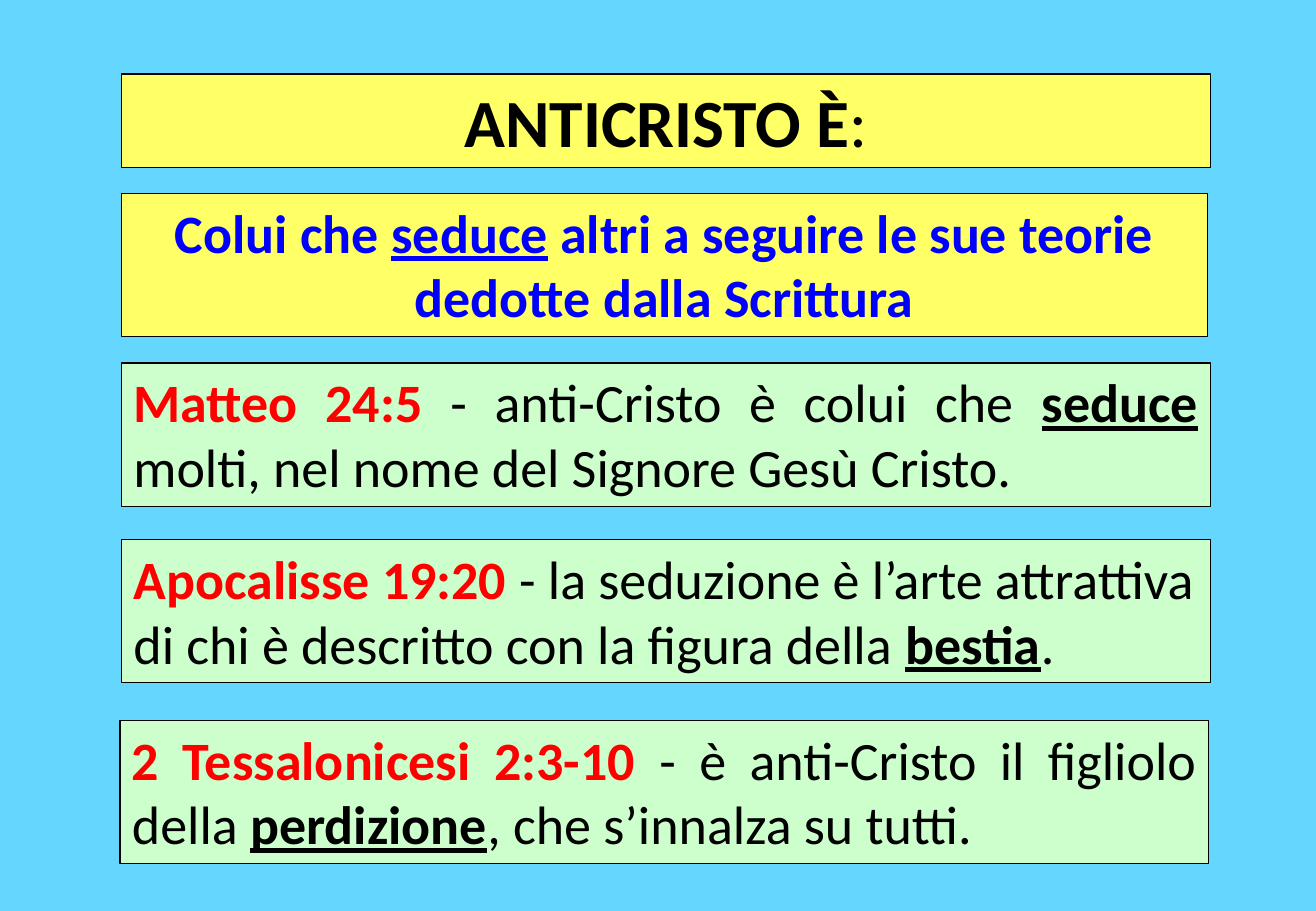
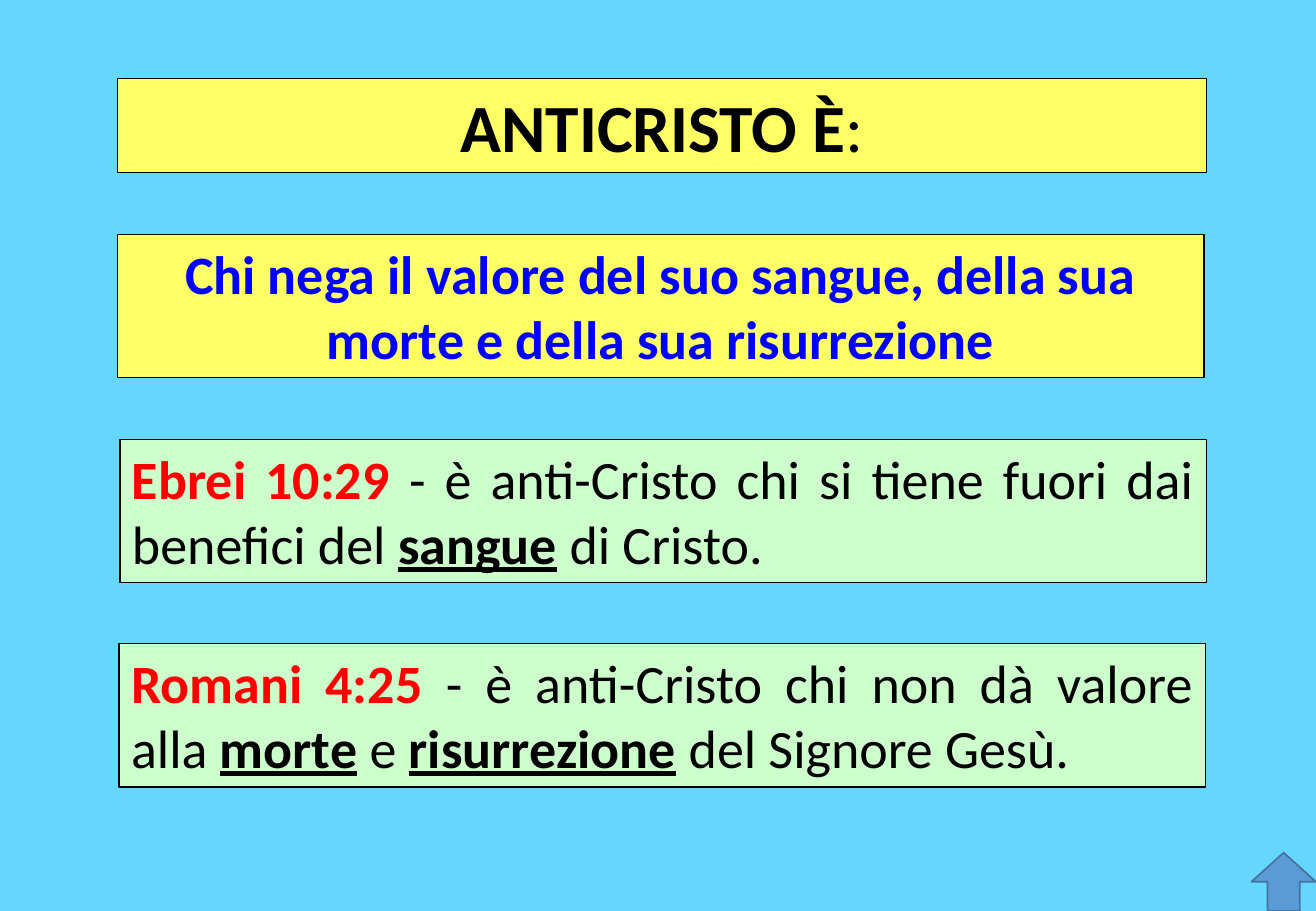
from dataclasses import dataclass
from typing import NamedTuple

from pptx import Presentation
from pptx.dml.color import RGBColor
from pptx.enum.shapes import MSO_SHAPE
from pptx.enum.text import MSO_AUTO_SIZE, PP_ALIGN
from pptx.util import Cm, Pt

LEFT, CENTER, JUSTIFY = PP_ALIGN.LEFT, PP_ALIGN.CENTER, PP_ALIGN.JUSTIFY
GROW = MSO_AUTO_SIZE.SHAPE_TO_FIT_TEXT
UP_ARROW = MSO_SHAPE.UP_ARROW

SLIDE_WIDTH, SLIDE_HEIGHT = Cm(27.51), Cm(19.05)
ARROW_WIDTH, ARROW_HEIGHT = Cm(1.35), Cm(1.22)
HEADING_HEIGHT, PANEL_HEIGHT = 1.96, 3.0
WIDE, NARROW = 22.76, 22.71


@dataclass(frozen=True)
class Theme:
    font: str = "Calibri"
    heading_size: int = 40
    body_size: int = 32
    border_width: float = 0.75
    background: str = "65D7FF"
    heading_fill: str = "FFFF66"
    verse_fill: str = "CCFFCC"
    ink: str = "000000"
    thesis: str = "0000FF"
    reference: str = "FF0000"
    arrow_fill: str = "5B9BD5"
    arrow_line: str = "43739E"


THEME = Theme()


class Run(NamedTuple):
    text: str
    color: str = THEME.ink
    bold: bool = False
    underline: bool = False


@dataclass(frozen=True)
class Panel:
    """A bordered text panel; lengths are in centimetres."""
    left: float
    top: float
    runs: tuple[Run, ...]
    width: float = WIDE
    height: float = PANEL_HEIGHT
    fill: str = THEME.verse_fill
    align: PP_ALIGN = JUSTIFY
    size: int = THEME.body_size


def key(text: str) -> Run:
    """A stressed word inside a verse."""
    return Run(text, bold=True, underline=True)


def reference(text: str) -> Run:
    return Run(text, THEME.reference, bold=True)


def thesis(text: str, underline: bool = False) -> Run:
    return Run(text, THEME.thesis, True, underline)


def heading_panel(left: float, top: float) -> Panel:
    return Panel(left, top, (Run("ANTICRISTO È", bold=True), Run(":")),
                 height=HEADING_HEIGHT, fill=THEME.heading_fill,
                 align=CENTER, size=THEME.heading_size)


def thesis_panel(left: float, top: float, *runs: Run) -> Panel:
    return Panel(left, top, runs, NARROW, fill=THEME.heading_fill, align=CENTER)


SEDUCTION = (
    heading_panel(2.54, 1.55),
    thesis_panel(2.54, 4.04, thesis("Colui che "), thesis("seduce", True),
                 thesis(" altri a seguire le sue teorie dedotte dalla Scrittura")),
    Panel(2.54, 7.59, (
        reference("Matteo 24:5 "), Run("- anti-Cristo è colui che "),
        key("seduce"), Run(" molti, nel nome del Signore Gesù Cristo."))),
    Panel(2.54, 11.28, (
        reference("Apocalisse 19:20 "),
        Run("- la seduzione è l’arte attrattiva di chi è descritto "
            "con la figura della "),
        key("bestia"), Run(".")), align=LEFT),
    Panel(2.51, 15.06, (
        reference("2 Tessalonicesi 2:3-10 "),
        Run("- è anti-Cristo il figliolo della "),
        key("perdizione"), Run(", che s’innalza su tutti."))),
)

DENIAL = (
    heading_panel(2.46, 1.65),
    thesis_panel(2.46, 4.9, thesis("Chi nega il valore del suo sangue, della sua "
                                   "morte e della sua risurrezione")),
    Panel(2.51, 9.19, (
        reference("Ebrei 10:29"),
        Run(" - è anti-Cristo chi si tiene fuori dai benefici del "),
        key("sangue"), Run(" di Cristo.")), NARROW),
    Panel(2.49, 13.46, (
        reference("Romani 4:25"),
        Run(" - è anti-Cristo chi non dà valore alla "), key("morte"),
        Run(" e "), key("risurrezione"), Run(" del Signore Gesù.")), NARROW),
)


def paint(shape, fill: str, line: str, width: float) -> None:
    shape.fill.solid()
    shape.fill.fore_color.rgb = RGBColor.from_string(fill)
    shape.line.color.rgb = RGBColor.from_string(line)
    shape.line.width = Pt(width)


def add_panel(slide, panel: Panel) -> None:
    box = slide.shapes.add_textbox(Cm(panel.left), Cm(panel.top),
                                   Cm(panel.width), Cm(panel.height))
    paint(box, panel.fill, THEME.ink, THEME.border_width)
    frame = box.text_frame
    frame.word_wrap = True
    frame.auto_size = GROW
    paragraph = frame.paragraphs[0]
    paragraph.alignment = panel.align
    for part in panel.runs:
        run = paragraph.add_run()
        run.text = part.text
        font_format = {"name": THEME.font, "size": Pt(panel.size),
                       "bold": part.bold, "underline": part.underline}
        for attribute, value in font_format.items():
            setattr(run.font, attribute, value)
        run.font.color.rgb = RGBColor.from_string(part.color)


def add_slide(deck, panels: tuple[Panel, ...]):
    slide = deck.slides.add_slide(deck.slide_layouts[6])
    background = slide.background.fill
    background.solid()
    background.fore_color.rgb = RGBColor.from_string(THEME.background)
    for panel in panels:
        add_panel(slide, panel)
    return slide


def add_corner_arrow(slide) -> None:
    arrow = slide.shapes.add_shape(
        UP_ARROW, SLIDE_WIDTH - ARROW_WIDTH, SLIDE_HEIGHT - ARROW_HEIGHT,
        ARROW_WIDTH, ARROW_HEIGHT)
    arrow.shadow.inherit = False
    paint(arrow, THEME.arrow_fill, THEME.arrow_line, 1)


def main() -> None:
    deck = Presentation()
    deck.slide_width, deck.slide_height = SLIDE_WIDTH, SLIDE_HEIGHT
    add_slide(deck, SEDUCTION)
    add_corner_arrow(add_slide(deck, DENIAL))
    deck.save("out.pptx")


if __name__ == "__main__":
    main()
